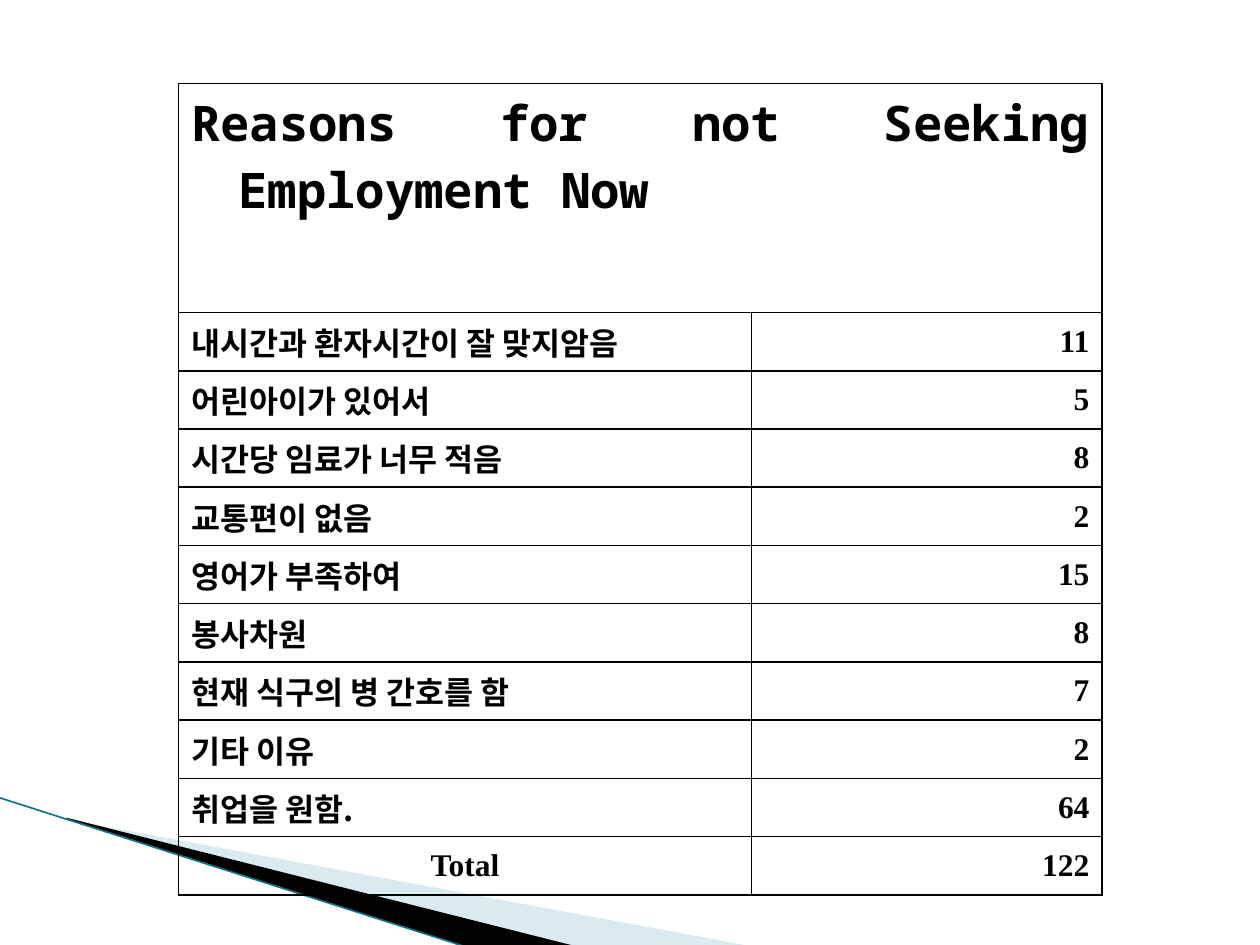
from lxml import etree
from pptx import Presentation
from pptx.dml.color import RGBColor
from pptx.enum import shapes, text
from pptx.oxml import ns
from pptx.util import Pt

COLORS = {"ink": "000000", "wave": "A0CBDC", "edge": "1A7082"}
HEADING = "Reasons for not Seeking Employment Now"
REASONS = [
    ("내시간과 환자시간이 잘 맞지암음", 11),
    ("어린아이가 있어서", 5),
    ("시간당 임료가 너무 적음", 8),
    ("교통편이 없음", 2),
    ("영어가 부족하여", 15),
    ("봉사차원", 8),
    ("현재 식구의 병 간호를 함", 7),
    ("기타 이유", 2),
    ("취업을 원함.", 64),
]
TOTAL = ("Total", 122)
MONO, KOREAN, SERIF = "Noto Sans Mono", "Noto Sans CJK KR", "Times New Roman"
ALIGN = text.PP_ALIGN


def rgb(name):
    return RGBColor.from_string(COLORS[name])


def add_child(parent, tag, **attributes):
    return etree.SubElement(parent, ns.qn(tag), attributes)


def add_wave(slide, left, top, points, color, alpha=None):
    """Draw a filled sliver; points are offsets from left and top."""
    (start, *rest) = [(Pt(left + x), Pt(top + y)) for x, y in points]
    builder = slide.shapes.build_freeform(*start, scale=1.0)
    builder.add_line_segments(rest, close=True)
    wave = builder.convert_to_shape()
    wave.shadow.inherit = False
    wave.fill.solid()
    wave.fill.fore_color.rgb = rgb(color)
    wave.line.fill.background()
    if alpha:
        srgb = wave.fill._xPr.find(".//" + ns.qn("a:srgbClr"))
        add_child(srgb, "a:alpha", val=str(alpha * 1000))


def add_corner_waves(slide, left, top):
    add_wave(slide, left + 40, top + 12,
             [(0, 0.7), (388.8, 72.7), (288.7, 72.7), (0, 0)], "wave", 40)
    add_wave(slide, left + 38.5, top + 11.5,
             [(0, 0), (290.9, 73.4), (229.7, 74.2), (0.7, 0.7)], "ink")
    edge = slide.shapes.add_connector(
        shapes.MSO_CONNECTOR.STRAIGHT,
        Pt(left), Pt(top), Pt(left + 268), Pt(top + 85.7))
    edge.line.color.rgb = rgb("edge")
    edge.line.width = Pt(0.95)
    add_child(edge._element.spPr, "a:effectLst")


def format_cell(cell, ruled_sides):
    """Clear the fill and rule only the given sides, out of L, R, T and B."""
    cell.fill.background()
    properties = cell._tc.get_or_add_tcPr()
    for index, side in enumerate("LRTB"):
        rule = etree.Element(ns.qn("a:ln" + side), w=str(Pt(1)))
        if side in ruled_sides:
            solid = add_child(rule, "a:solidFill")
            add_child(solid, "a:srgbClr", val=COLORS["ink"])
        else:
            add_child(rule, "a:noFill")
        properties.insert(index, rule)


def write_cell(cell, content, font, size, align):
    cell.vertical_anchor = text.MSO_ANCHOR.MIDDLE
    paragraph = cell.text_frame.paragraphs[0]
    paragraph.alignment = align
    hanging = paragraph._p.get_or_add_pPr()
    hanging.set("marL", str(Pt(27)))
    hanging.set("indent", str(-Pt(27)))
    run = paragraph.add_run()
    run.text = str(content)
    run.font.name = font
    run.font.size = Pt(size)
    run.font.bold = True
    run.font.color.rgb = rgb("ink")
    add_child(run._r.get_or_add_rPr(), "a:ea", typeface=font)


def add_reasons_table(slide, left, top, widths, head_heights, row_height):
    """The head is an open spacer row, the heading and a spacer below it."""
    entries = REASONS + [TOTAL]
    heights = head_heights + [row_height] * len(entries)
    table = slide.shapes.add_table(
        len(heights), len(widths), Pt(left), Pt(top),
        Pt(sum(widths)), Pt(sum(heights))).table
    table.first_row = table.horz_banding = False
    for column, width in zip(table.columns, widths):
        column.width = Pt(width)
    for row, height in zip(table.rows, heights):
        row.height = Pt(height)

    head_sides = ["B", "LRT", "LRB"]
    for index, row in enumerate(table.rows):
        sides = head_sides[index] if index < len(head_sides) else "LRTB"
        for cell in row.cells:
            format_cell(cell, sides)

    table.cell(0, 0).merge(table.cell(0, 1))
    for index in (1, 2):
        table.cell(index, 0).merge(table.cell(index, 2))
    write_cell(table.cell(1, 0), HEADING, MONO, 28, ALIGN.JUSTIFY)

    for index, entry in enumerate(entries, start=len(head_heights)):
        reason, count = entry
        is_total = entry == TOTAL
        table.cell(index, 1).merge(table.cell(index, 2))
        write_cell(table.cell(index, 0), reason,
                   SERIF if is_total else KOREAN, 18,
                   ALIGN.CENTER if is_total else ALIGN.LEFT)
        write_cell(table.cell(index, 1), count, SERIF, 18, ALIGN.RIGHT)


def main():
    deck = Presentation()
    deck.slide_width, deck.slide_height = Pt(720), Pt(540)
    slide = deck.slides.add_slide(deck.slide_layouts[6])
    add_corner_waves(slide, -0.5, 455.8)
    add_reasons_table(slide, 102, 0, (327.4, 52.6, 147.8),
                      [47.6, 83.4, 47.6], 33.3)
    deck.save("out.pptx")


if __name__ == "__main__":
    main()
